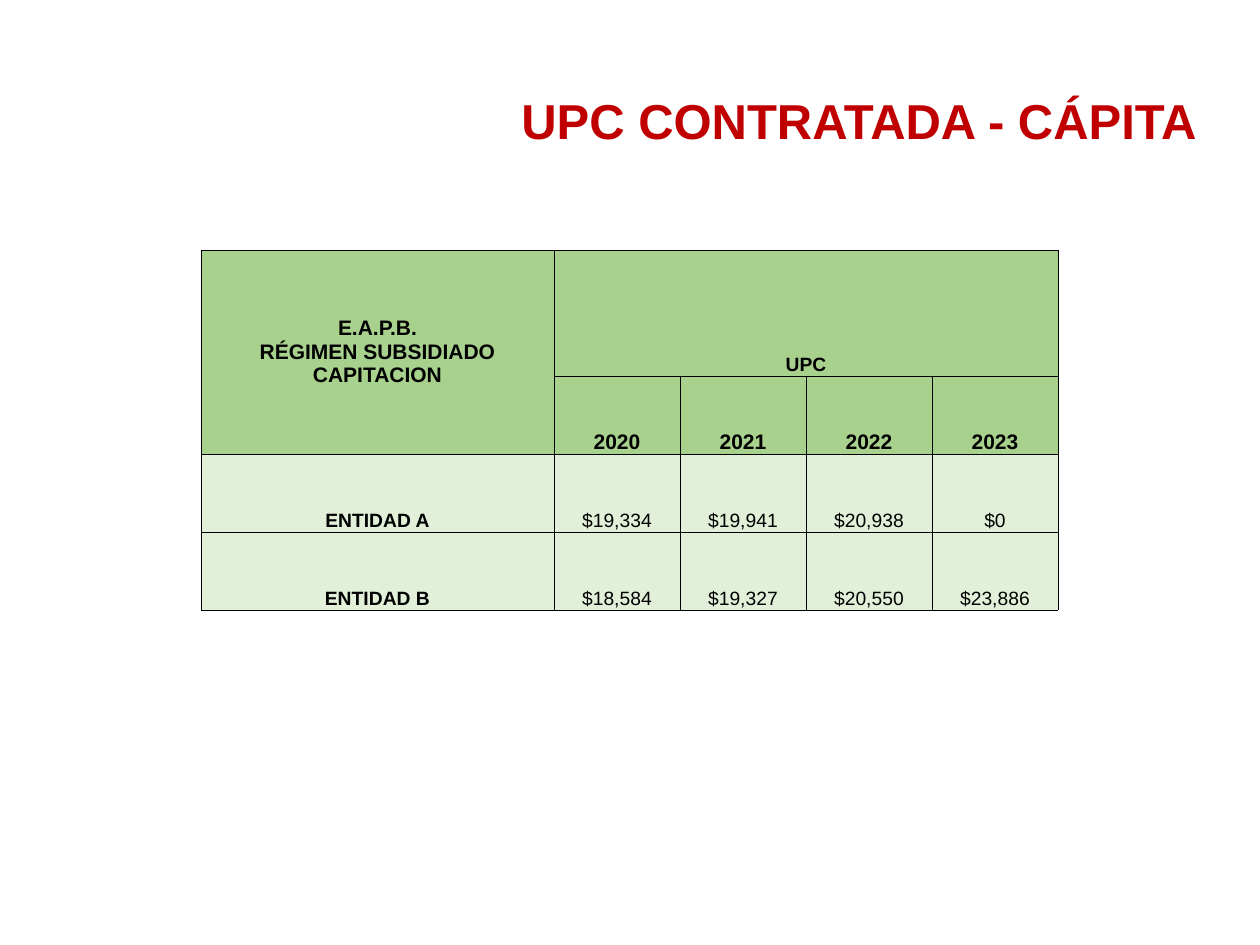
import pptx
import pptx.util
import pptx.dml.color
import pptx.enum.text
import pptx.oxml
import pptx.oxml.ns

ALIGN = pptx.enum.text.PP_ALIGN
ANCHOR = pptx.enum.text.MSO_ANCHOR
NS = pptx.oxml.ns.nsdecls("a")


def px(n):
    return pptx.util.Emu(round(n * 914400 / 126))


def write(tf, text, size=11, color="000000", bold=True, align=ALIGN.CENTER, spacing=1.0):
    for i, line in enumerate(text.split("\n")):
        p = tf.paragraphs[0] if i == 0 else tf.add_paragraph()
        p.alignment = align
        p.line_spacing = spacing
        r = p.add_run()
        r.text = line
        r.font.name = "Arial"
        r.font.size = pptx.util.Pt(size)
        r.font.bold = bold
        r.font.color.rgb = pptx.dml.color.RGBColor.from_string(color)


prs = pptx.Presentation()
prs.slide_width, prs.slide_height = px(1260), px(945)
s = prs.slides.add_slide(prs.slide_layouts[6])

sp = s.shapes.add_textbox(px(509), px(77), px(790), px(93))
tf = sp.text_frame
tf.word_wrap = True
tf.vertical_anchor = ANCHOR.MIDDLE
write(tf, "UPC CONTRATADA - CÁPITA", size=28, color="C00000", align=ALIGN.LEFT, spacing=0.9)

rows = [
    ["E.A.P.B.\nRÉGIMEN SUBSIDIADO CAPITACION", "UPC", "", "", ""],
    ["", "2020", "2021", "2022", "2023"],
    ["ENTIDAD A", "$19,334", "$19,941", "$20,938", "$0"],
    ["ENTIDAD B", "$18,584", "$19,327", "$20,550", "$23,886"],
]
widths = [353, 126, 126, 126, 126]
heights = [126, 78, 78, 78]

table = s.shapes.add_table(4, 5, px(201), px(250), px(sum(widths)), px(sum(heights))).table
for column, width in zip(table.columns, widths):
    column.width = px(width)
for row, height in zip(table.rows, heights):
    row.height = px(height)
table.cell(0, 0).merge(table.cell(1, 0))
table.cell(0, 1).merge(table.cell(0, 4))

for i, row in enumerate(rows):
    for j, text in enumerate(row):
        cell = table.cell(i, j)
        cell.margin_left = cell.margin_right = cell.margin_top = cell.margin_bottom = 0
        cell.vertical_anchor = ANCHOR.MIDDLE if i == j == 0 else ANCHOR.BOTTOM
        tcPr = cell._tc.get_or_add_tcPr()
        for side in ("lnL", "lnR", "lnT", "lnB"):
            tcPr.append(pptx.oxml.parse_xml(
                f'<a:{side} {NS} w="6350"><a:solidFill><a:srgbClr val="000000"/>'
                f'</a:solidFill></a:{side}>'))
        cell.fill.solid()
        cell.fill.fore_color.rgb = pptx.dml.color.RGBColor.from_string("A9D18E" if i < 2 else "E2F0D9")
        if text:
            size = 12 if i < 2 and text != "UPC" else 11
            write(cell.text_frame, text, size=size, bold=i < 2 or j == 0)

prs.save("out.pptx")
